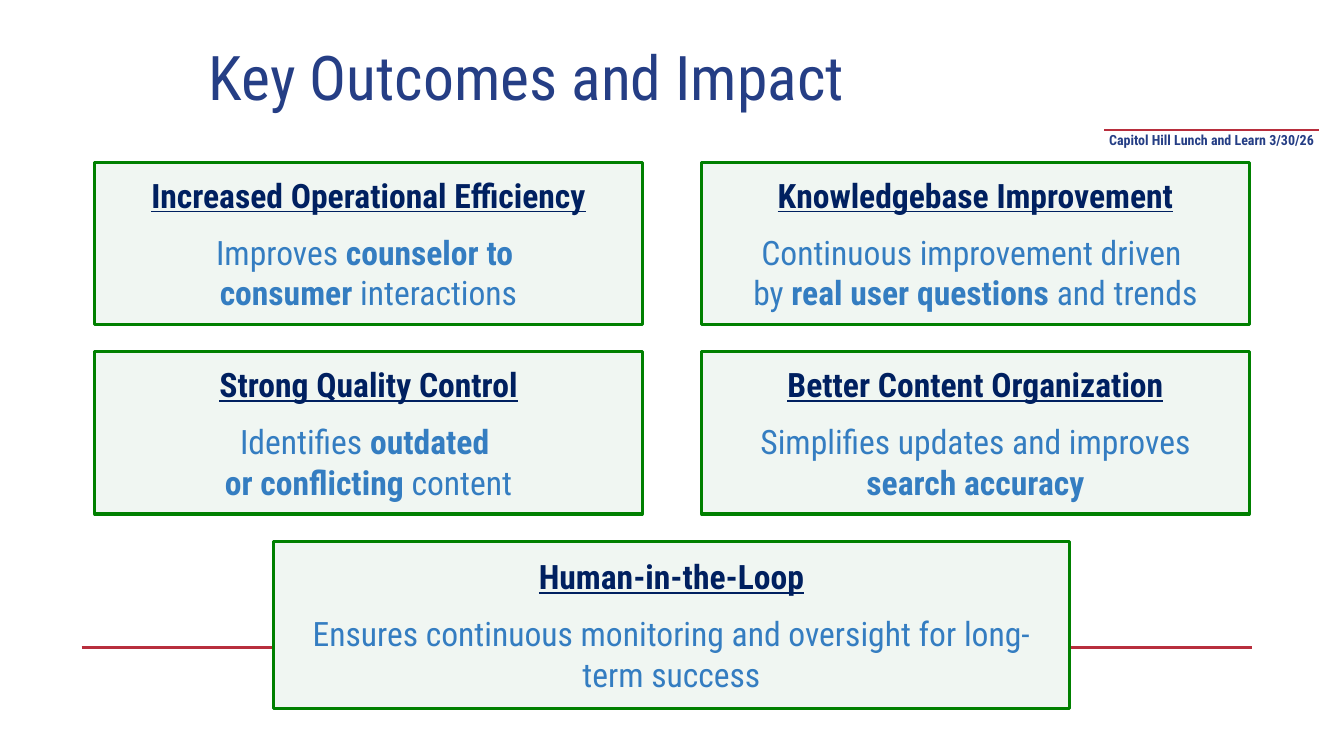
from pptx import Presentation
from pptx.util import Inches, Pt
from pptx.dml.color import RGBColor
from pptx.enum.shapes import MSO_CONNECTOR, MSO_SHAPE
from pptx.enum.text import MSO_ANCHOR, MSO_AUTO_SIZE, PP_ALIGN
from pptx.oxml.ns import qn
from lxml import etree

LEFT, CENTER = PP_ALIGN.LEFT, PP_ALIGN.CENTER
MIDDLE, NO_FIT = MSO_ANCHOR.MIDDLE, MSO_AUTO_SIZE.NONE
RECT, STRAIGHT = MSO_SHAPE.RECTANGLE, MSO_CONNECTOR.STRAIGHT

FONT = "Roboto Condensed"
INDIGO = RGBColor(0x25, 0x3E, 0x85)
NAVY = RGBColor(0x00, 0x20, 0x60)
BLUE = RGBColor(0x34, 0x7D, 0xC1)
GREEN = RGBColor(0x00, 0x80, 0x00)
MINT = RGBColor(0xF0, 0xF6, 0xF2)
RED = RGBColor(0xB8, 0x2E, 0x3D)


def write(par, text, size=24, color=BLUE, align=CENTER, bold=False, line=None, gap=None):
    """Fill a paragraph; parts between ** marks swap the bold setting."""
    par.alignment = align
    if gap:
        par.space_before = Pt(gap)
    for i, part in enumerate(text.split("**")):
        if part:
            run = par.add_run()
            run.text = part
            font = run.font
            font.name, font.size, font.color.rgb = FONT, Pt(size), color
            font.bold = bold != (i % 2 == 1)
            font.underline = line


deck = Presentation()
deck.slide_width, deck.slide_height = Inches(13.33), Inches(7.5)
slide = deck.slides.add_slide(deck.slide_layouts[5])
shapes = slide.shapes

# Rules
for x1, x2, y, width in [(0.81, 12.42, 6.42, 2.25), (10.95, 13.08, 1.29, 0.75)]:
    rule = shapes.add_connector(STRAIGHT, Inches(x1), Inches(y), Inches(x2), Inches(y))
    rule.line.color.rgb, rule.line.width = RED, Pt(width)
    etree.SubElement(rule._element.spPr, qn("a:effectLst"))

# Event label
label = shapes.add_textbox(Inches(10.89), Inches(1.22), Inches(2.25), Inches(0.46))
frame = label.text_frame
frame.word_wrap = True
frame.margin_top = frame.margin_bottom = Inches(0.1)
write(frame.paragraphs[0], "Capitol Hill Lunch and Learn 3/30/26", size=10, color=INDIGO, bold=True)

# Outcome cards: two by two, then a wide one
CARDS = [
    ("Increased Operational Efficiency",
     ["Improves **counselor to ", "**consumer** interactions"]),
    ("Knowledgebase Improvement",
     ["Continuous improvement driven ", "by **real user questions **and trends"]),
    ("Strong Quality Control",
     ["Identifies **outdated ", "**or conflicting **content"]),
    ("Better Content Organization",
     ["Simplifies updates and improves **search accuracy"]),
    ("Human-in-the-Loop",
     ["Ensures continuous monitoring and oversight for long-term success"]),
]
X, Y, WIDE, HIGH = 0.94, 1.61, 5.43, 1.61
STEP_X, STEP_Y = 6.02, 1.88

for i, (head, lines) in enumerate(CARDS):
    row, col = divmod(i, 2)
    box = (X + col * STEP_X, Y + row * STEP_Y, WIDE, HIGH)
    if row == 2:
        box = (2.71, Y + row * STEP_Y, 7.9, 1.66)
    card = shapes.add_shape(RECT, *[Inches(n) for n in box])
    card.shadow.inherit = False
    card.fill.solid()
    card.fill.fore_color.rgb = MINT
    card.line.color.rgb, card.line.width = GREEN, Pt(2.25)
    frame = card.text_frame
    frame.word_wrap, frame.vertical_anchor = True, MIDDLE
    write(frame.paragraphs[0], head, color=NAVY, bold=True, line=True)
    for n, text in enumerate(lines):
        write(frame.add_paragraph(), text, gap=0 if n else 12)

# Title
title = shapes.title
title.left, title.top = Inches(1.97), Inches(0.32)
title.width, title.height = Inches(8.26), Inches(0.96)
frame = title.text_frame
frame.auto_size, frame.vertical_anchor, frame.word_wrap = NO_FIT, MIDDLE, True
frame.paragraphs[0].line_spacing = 0.9
write(frame.paragraphs[0], "Key Outcomes and Impact", size=44, color=INDIGO, align=LEFT)

deck.save("out.pptx")
